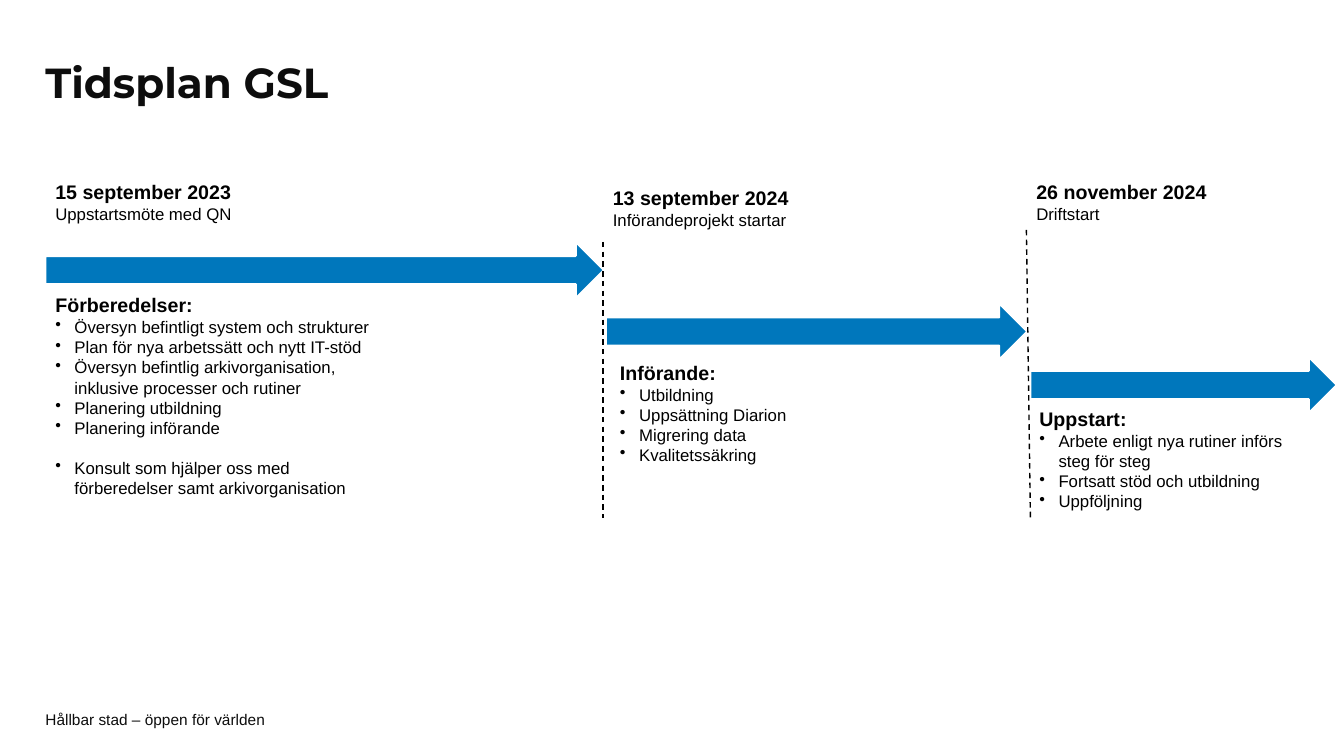
from dataclasses import dataclass

from lxml import etree
from pptx import Presentation
from pptx.dml.color import RGBColor
from pptx.enum.dml import MSO_LINE
from pptx.enum.shapes import MSO_CONNECTOR, MSO_SHAPE
from pptx.enum.text import MSO_ANCHOR, MSO_AUTO_SIZE, PP_ALIGN
from pptx.oxml.ns import qn
from pptx.util import Inches, Pt

ARROW = MSO_SHAPE.RIGHT_ARROW
STRAIGHT = MSO_CONNECTOR.STRAIGHT
DASH = MSO_LINE.DASH
MIDDLE = MSO_ANCHOR.MIDDLE
LEFT = PP_ALIGN.LEFT
NO_FIT = MSO_AUTO_SIZE.NONE


@dataclass(frozen=True)
class Theme:
    blue: RGBColor = RGBColor(0x00, 0x77, 0xBC)
    white: RGBColor = RGBColor(0xFF, 0xFF, 0xFF)
    black: RGBColor = RGBColor(0, 0, 0)
    ink: RGBColor = RGBColor(0x0D, 0x0D, 0x0D)
    body: str = "Arial"
    display: str = "Montserrat"
    title: int = 30
    head: int = 14
    text: int = 12
    foot: int = 11
    gap: int = 14
    indent: float = 0.19


class Board:
    def __init__(self, theme, slide):
        self.theme, self.slide = theme, slide

    def style(self, par, size, color, bold=False, face=None):
        font = par.font
        font.name = face or self.theme.body
        font.size, font.bold = Pt(size), bold
        font.color.rgb = color

    def title(self, text, box):
        shape = self.slide.shapes.title
        shape.left, shape.top, shape.width, shape.height = map(Inches, box)
        frame = shape.text_frame
        frame.text = text
        frame.auto_size, frame.vertical_anchor = NO_FIT, MIDDLE
        frame.margin_left = frame.margin_right = 0
        par = frame.paragraphs[0]
        par.alignment, par.line_spacing = LEFT, 0.9
        self.style(par, self.theme.title, self.theme.ink, True,
                   self.theme.display)

    def frame(self, box):
        frame = self.slide.shapes.add_textbox(*map(Inches, box)).text_frame
        frame.word_wrap = True
        return frame

    def footer(self, text, box):
        frame = self.frame(box)
        frame.margin_left = frame.margin_right = 0
        frame.margin_top = frame.margin_bottom = 0
        frame.vertical_anchor = MIDDLE
        frame.text = text
        self.style(frame.paragraphs[0], self.theme.foot, self.theme.ink)

    def bullet(self, par):
        props = par._p.get_or_add_pPr()
        step = Inches(self.theme.indent)
        props.set("marL", str(step))
        props.set("indent", str(-step))
        etree.SubElement(props, qn("a:buChar")).set("char", "•")

    def block(self, box, head, lines, listed=False, apart=()):
        """Bold heading over lines; those in apart get a gap above."""
        theme, frame = self.theme, self.frame(box)
        frame.text = head
        self.style(frame.paragraphs[0], theme.head, theme.black, True)
        for line in lines:
            par = frame.add_paragraph()
            par.text = line
            if listed:
                self.bullet(par)
            if line in apart:
                par.space_before = Pt(theme.gap)
            self.style(par, theme.text, theme.black)

    def arrow(self, left, top, width):
        box = map(Inches, (left, top, width, 0.56))
        shape = self.slide.shapes.add_shape(ARROW, *box)
        shape.shadow.inherit = False
        shape.fill.solid()
        shape.fill.fore_color.rgb = self.theme.blue
        shape.line.color.rgb = self.theme.white
        shape.line.width = Pt(1.5)

    def divider(self, *ends):
        rule = self.slide.shapes.add_connector(STRAIGHT, *map(Inches, ends))
        rule.line.color.rgb = self.theme.black
        rule.line.width = Pt(1)
        rule.line.dash_style = DASH
        etree.SubElement(rule._element.spPr, qn("a:effectLst"))


CONSULT = "Konsult som hjälper oss med förberedelser samt arkivorganisation"

# Arrow (left, top, width), date box, date, event, task box, heading, tasks
PHASES = [
    ((0.45, 2.4, 5.54), (0.45, 1.74, 2.21, 0.54),
     "15 september 2023", "Uppstartsmöte med QN",
     (0.45, 2.86, 3.32, 2.15), "Förberedelser:",
     ["Översyn befintligt system och strukturer",
      "Plan för nya arbetssätt och nytt IT-stöd",
      "Översyn befintlig arkivorganisation, inklusive processer och rutiner",
      "Planering utbildning", "Planering införande", CONSULT]),
    ((6.01, 3.01, 4.18), (5.98, 1.8, 1.96, 0.54),
     "13 september 2024", "Införandeprojekt startar",
     (6.05, 3.53, 3.32, 1.14), "Införande:",
     ["Utbildning", "Uppsättning Diarion", "Migrering data",
      "Kvalitetssäkring"]),
    ((10.22, 3.54, 3.04), (10.18, 1.74, 1.96, 0.54),
     "26 november 2024", "Driftstart",
     (10.21, 3.99, 2.79, 1.14), "Uppstart:",
     ["Arbete enligt nya rutiner införs steg för steg",
      "Fortsatt stöd och utbildning", "Uppföljning"]),
]


def main():
    deck = Presentation()
    deck.slide_width, deck.slide_height = Inches(13.33), Inches(7.5)
    board = Board(Theme(), deck.slides.add_slide(deck.slide_layouts[5]))
    board.title("Tidsplan GSL", (0.45, 0.44, 10.03, 0.81))
    board.footer("Hållbar stad – öppen för världen", (0.45, 7.06, 9.45, 0.16))
    for arrow, spot, date, event, box, head, tasks in PHASES:
        board.arrow(*arrow)
        board.block(spot, date, [event])
        board.block(box, head, tasks, listed=True, apart=[CONSULT])
    board.divider(5.98, 2.4, 5.98, 5.14)
    board.divider(10.18, 2.28, 10.22, 5.14)
    deck.save("out.pptx")


if __name__ == "__main__":
    main()
